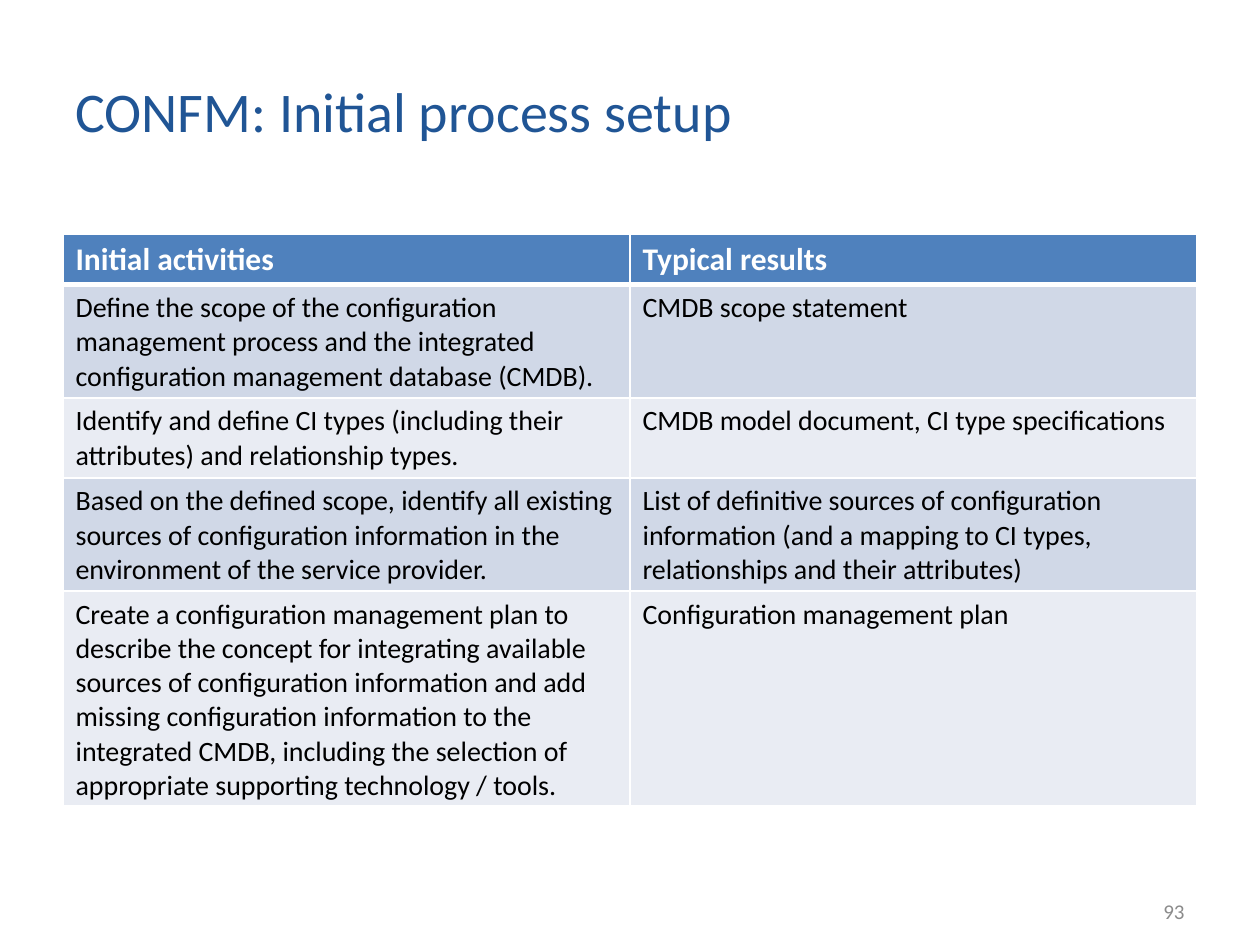
from dataclasses import dataclass

from lxml import etree
from pptx import Presentation
from pptx.dml.color import RGBColor
from pptx.enum.text import MSO_ANCHOR, PP_ALIGN
from pptx.oxml.ns import qn
from pptx.util import Cm, Pt

MIDDLE = MSO_ANCHOR.MIDDLE
LEFT, RIGHT = PP_ALIGN.LEFT, PP_ALIGN.RIGHT
FONT = "Calibri"
COLORS = {
    "title": "205595",
    "number": "8B8B8B",
    "header": "4F81BD",
    "odd_row": "D0D8E7",
    "even_row": "E9ECF3",
    "white": "FFFFFF",
    "black": "000000",
}
GRID_WIDTH, HEADER_RULE_WIDTH = Pt(0.96), Pt(3)


@dataclass
class Label:
    text: str
    left: float
    top: float
    width: float
    height: float
    size: int
    color: str
    align: PP_ALIGN = LEFT


@dataclass
class SetupStep:
    activity: str
    result: str
    height: float


LABELS = [
    Label("CONFM: Initial process setup", 1.27, 0.76, 20.42, 2.92, 32, "title"),
    Label("93", 18.21, 17.86, 5.92, 1.02, 12, "number", RIGHT),
]

# The first step holds the column headings
STEPS = [
    SetupStep("Initial activities", "Typical results", 0.89),
    SetupStep(
        "Define the scope of the configuration management process and the "
        "integrated configuration management database (CMDB).",
        "CMDB scope statement",
        1.93,
    ),
    SetupStep(
        "Identify and define CI types (including their attributes) and "
        "relationship types.",
        "CMDB model document, CI type specifications",
        1.37,
    ),
    SetupStep(
        "Based on the defined scope, identify all existing sources of "
        "configuration information in the environment of the service provider.",
        "List of definitive sources of configuration information (and a "
        "mapping to CI types, relationships and their attributes)",
        1.93,
    ),
    SetupStep(
        "Create a configuration management plan to describe the concept for "
        "integrating available sources of configuration information and add "
        "missing configuration information to the integrated CMDB, including "
        "the selection of appropriate supporting technology / tools.",
        "Configuration management plan",
        3.61,
    ),
]


def set_font(paragraph, size: int, color: str, bold: bool = False) -> None:
    font = paragraph.font
    font.name, font.size, font.bold = FONT, Pt(size), bold
    font.color.rgb = RGBColor.from_string(COLORS[color])


def add_label(slide, label: Label) -> None:
    box = slide.shapes.add_textbox(
        Cm(label.left), Cm(label.top), Cm(label.width), Cm(label.height)
    )
    frame = box.text_frame
    frame.word_wrap = True
    frame.vertical_anchor = MIDDLE
    frame.text = label.text
    paragraph = frame.paragraphs[0]
    paragraph.alignment = label.align
    set_font(paragraph, label.size, label.color)


def set_borders(cell, top: int, bottom: int) -> None:
    """Draw white rules round a cell; borders come before the fill in tcPr."""
    properties = cell._tc.get_or_add_tcPr()
    sides = {"lnL": GRID_WIDTH, "lnR": GRID_WIDTH, "lnT": top, "lnB": bottom}
    for position, (side, width) in enumerate(sides.items()):
        line = etree.Element(qn(f"a:{side}"), w=str(int(width)))
        fill = etree.SubElement(line, qn("a:solidFill"))
        etree.SubElement(fill, qn("a:srgbClr"), val=COLORS["white"])
        properties.insert(position, line)


def fill_cell(cell, text: str, row: int) -> None:
    is_header = row == 0
    background = "header" if is_header else "odd_row" if row % 2 else "even_row"
    cell.text = text
    cell.fill.solid()
    cell.fill.fore_color.rgb = RGBColor.from_string(COLORS[background])
    set_font(
        cell.text_frame.paragraphs[0],
        18 if is_header else 16,
        "white" if is_header else "black",
        is_header,
    )
    set_borders(
        cell,
        top=HEADER_RULE_WIDTH if row == 1 else GRID_WIDTH,
        bottom=HEADER_RULE_WIDTH if is_header else GRID_WIDTH,
    )


def add_steps_table(slide, steps: list[SetupStep]) -> None:
    height = sum(step.height for step in steps)
    table = slide.shapes.add_table(
        len(steps), 2, Cm(1.27), Cm(4.72), Cm(22.86), Cm(height)
    ).table
    for row, step in enumerate(steps):
        table.rows[row].height = Cm(step.height)
        for column, text in enumerate((step.activity, step.result)):
            fill_cell(table.cell(row, column), text, row)


def main() -> None:
    presentation = Presentation()
    presentation.slide_width, presentation.slide_height = Cm(25.4), Cm(19.05)
    slide = presentation.slides.add_slide(presentation.slide_layouts[6])

    # Title and page number
    for label in LABELS:
        add_label(slide, label)

    # Activities and their results
    add_steps_table(slide, STEPS)
    presentation.save("out.pptx")


if __name__ == "__main__":
    main()
